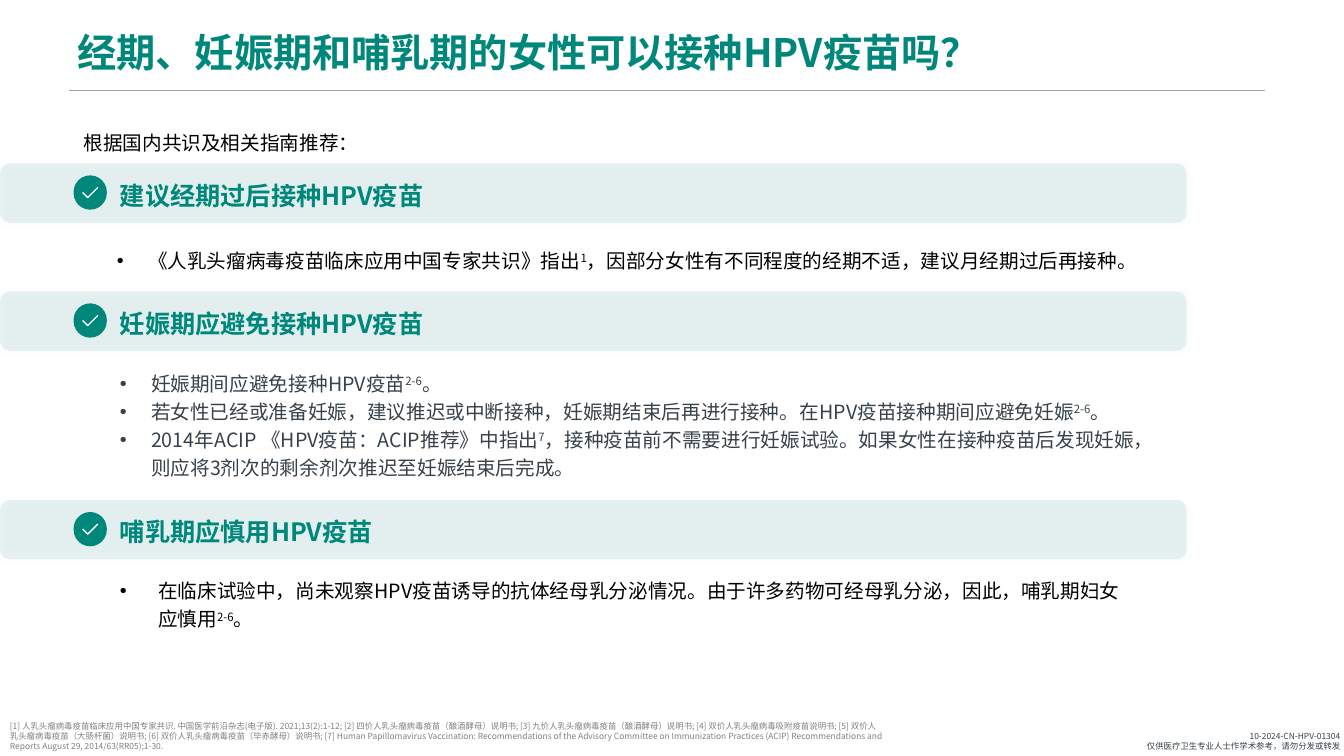
"""Slide on HPV vaccination during menstruation, pregnancy and lactation."""
from lxml import etree
from pptx import Presentation
from pptx.dml.color import RGBColor
from pptx.enum.shapes import MSO_CONNECTOR as Conn, MSO_SHAPE as Geo
from pptx.enum.text import MSO_ANCHOR as Anchor, PP_ALIGN as Align
from pptx.oxml import parse_xml
from pptx.oxml.ns import nsdecls, qn
from pptx.util import Pt

PX = 9144
FONT = "Noto Sans CJK SC"
TEAL, SLATE, BLACK = "00877B", "37424A", "000000"
hue = RGBColor.from_string

deck = Presentation()
deck.slide_width, deck.slide_height = 1333 * PX, 750 * PX
slide = deck.slides.add_slide(deck.slide_layouts[6])
shapes = slide.shapes


def write(box, lines, size, tint, bold=False, indent=0, anchor=Anchor.TOP, **look):
    """Add a text box; odd parts between ^ marks are superscript."""
    frame = shapes.add_textbox(*[n * PX for n in box]).text_frame
    frame.word_wrap = True
    frame.vertical_anchor = anchor
    face = {"size": Pt(size), "bold": bold, "name": FONT}
    for i, line in enumerate(lines):
        para = frame.paragraphs[0] if i == 0 else frame.add_paragraph()
        if indent:
            props = para._p.get_or_add_pPr()
            props.set("marL", str(indent * PX))
            props.set("indent", str(-indent * PX))
            etree.SubElement(props, qn("a:buFont")).set("typeface", "Arial")
            etree.SubElement(props, qn("a:buChar")).set("char", "•")
        for key, value in look.items():
            setattr(para, key, value)
        for j, part in enumerate(line.split("^")):
            run = para.add_run()
            run.text = part
            run.font.color.rgb = hue(tint)
            for key, value in face.items():
                setattr(run.font, key, value)
            props = run.font._element
            etree.SubElement(props, qn("a:ea")).set("typeface", FONT)
            if j % 2:
                props.set("baseline", "30000")


def paint(shape):
    """Give a shape a plain teal fill without line or shadow."""
    shape.shadow.inherit = False
    shape.fill.solid()
    shape.fill.fore_color.rgb = hue(TEAL)
    shape.line.fill.background()


rule = shapes.add_connector(Conn.STRAIGHT, 68 * PX, 89 * PX, 1255 * PX, 89 * PX)
rule.line.color.rgb = hue("92A2AE")
rule.line.width = Pt(0.25)
etree.SubElement(rule._element.spPr, qn("a:effectLst"))

write((67, 20, 1267, 69), ["经期、妊娠期和哺乳期的女性可以接种HPV疫苗吗？"], 28, TEAL,
      bold=True, anchor=Anchor.MIDDLE, line_spacing=0.9)
write((73, 120, 1099, 36), ["根据国内共识及相关指南推荐："], 14, BLACK, line_spacing=1.2)

parts = [
    (162, "建议经期过后接种HPV疫苗", (106, 231, 1099, 41), BLACK, 31, Pt(25), [
        "《人乳头瘤病毒疫苗临床应用中国专家共识》指出^1^，因部分女性有不同程度的经期不适，建议月经期过后再接种。",
    ]),
    (289, "妊娠期应避免接种HPV疫苗", (109, 359, 1029, 121), SLATE, 31, 1.2, [
        "妊娠期间应避免接种HPV疫苗^2-6^。",
        "若女性已经或准备妊娠，建议推迟或中断接种，妊娠期结束后再进行接种。在HPV疫苗接种期间应避免妊娠^2-6^。",
        "2014年ACIP 《HPV疫苗：ACIP推荐》中指出^7^，接种疫苗前不需要进行妊娠试验。"
        "如果女性在接种疫苗后发现妊娠，则应将3剂次的剩余剂次推迟至妊娠结束后完成。",
    ]),
    (496, "哺乳期应慎用HPV疫苗", (109, 565, 1029, 64), BLACK, 38, 1.2, [
        "在临床试验中，尚未观察HPV疫苗诱导的抗体经母乳分泌情况。"
        "由于许多药物可经母乳分泌，因此，哺乳期妇女应慎用^2-6^。",
    ]),
]

for top, head, box, tint, indent, gap, lines in parts:
    bar = shapes.add_shape(Geo.ROUNDED_RECTANGLE, 0, top * PX, 1177 * PX, 59 * PX)
    paint(bar)
    fill = bar._element.spPr.find(qn("a:solidFill"))
    etree.SubElement(fill[0], qn("a:alpha")).set("val", "9000")
    glow = bar._element.spPr.find(qn("a:effectLst"))
    glow.append(parse_xml(
        f'<a:outerShdw {nsdecls("a")} blurRad="76200" dist="0" dir="13500000">'
        '<a:srgbClr val="000000"><a:alpha val="20000"/></a:srgbClr></a:outerShdw>'))

    disc = shapes.add_shape(Geo.ROUNDED_RECTANGLE, 73 * PX, (top + 12) * PX, 33 * PX, 34 * PX)
    disc.adjustments[0] = 0.5
    paint(disc)

    pen = shapes.build_freeform(97, top + 24, scale=PX)
    pen.add_line_segments([(87, top + 34), (82, top + 29)], close=False)
    tick = pen.convert_to_shape()
    paint(tick)
    tick.line.color.rgb = hue("FFFFFF")
    tick.line.width = Pt(1)

    write((109, top + 7, 1015, 42), [head], 18, TEAL, bold=True, line_spacing=Pt(25))
    write(box, lines, 14, tint, indent=indent, line_spacing=gap)

write((0, 710, 885, 40), [
    "[1] 人乳头瘤病毒疫苗临床应用中国专家共识. 中国医学前沿杂志(电子版). 2021;13(2):1-12; "
    "[2] 四价人乳头瘤病毒疫苗（酿酒酵母）说明书; [3] 九价人乳头瘤病毒疫苗（酿酒酵母）说明书; "
    "[4] 双价人乳头瘤病毒吸附疫苗说明书; [5] 双价人乳头瘤病毒疫苗（大肠杆菌）说明书; "
    "[6] 双价人乳头瘤病毒疫苗（毕赤酵母）说明书; [7] Human Papillomavirus Vaccination: "
    "Recommendations of the Advisory Committee on Immunization Practices (ACIP) "
    "Recommendations and Reports August 29, 2014/63(RR05);1-30.",
], 6, "808080")
write((1016, 720, 323, 30), ["10-2024-CN-HPV-01304", "仅供医疗卫生专业人士作学术参考，请勿分发或转发"],
      6, SLATE, alignment=Align.RIGHT)

deck.save("out.pptx")
